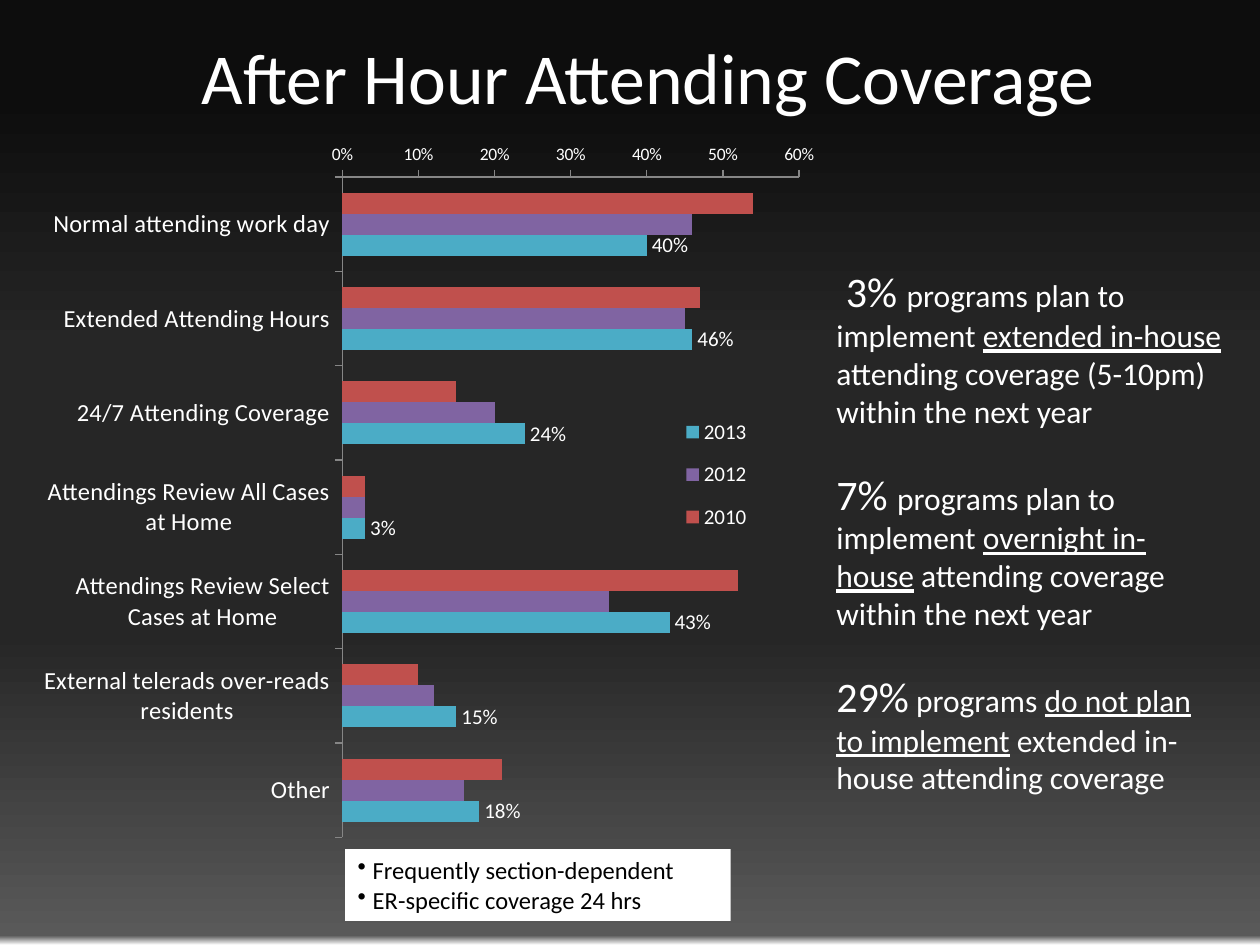
"""Build a slide on after hour attending coverage with a clustered bar chart."""
from dataclasses import dataclass

from lxml import etree
from pptx import Presentation
from pptx.chart.data import CategoryChartData
from pptx.dml.color import RGBColor
from pptx.enum.chart import XL_CHART_TYPE, XL_LABEL_POSITION, XL_LEGEND_POSITION, XL_TICK_MARK
from pptx.enum.shapes import MSO_SHAPE
from pptx.enum.text import MSO_ANCHOR, PP_ALIGN
from pptx.oxml.ns import qn
from pptx.util import Inches, Pt

BAR_CLUSTERED = XL_CHART_TYPE.BAR_CLUSTERED
OUTSIDE_END = XL_LABEL_POSITION.OUTSIDE_END
LEGEND_RIGHT = XL_LEGEND_POSITION.RIGHT
TICK_OUTSIDE, TICK_NONE = XL_TICK_MARK.OUTSIDE, XL_TICK_MARK.NONE
RECTANGLE = MSO_SHAPE.RECTANGLE
TOP, MIDDLE = MSO_ANCHOR.TOP, MSO_ANCHOR.MIDDLE
LEFT, CENTER = PP_ALIGN.LEFT, PP_ALIGN.CENTER

FONT = "Calibri"
WHITE, BLACK, AXIS_GRAY = "FFFFFF", "000000", "868686"
BACKGROUND_STOPS = [(10, "0D0D0D"), (37, "262626"), (67, "262626"), (99, "595959"), (100, WHITE)]
CATEGORIES = [
    "Normal attending work day",
    "Extended Attending Hours",
    "24/7 Attending Coverage",
    "Attendings Review All Cases at Home",
    "Attendings Review Select Cases at Home",
    "External telerads over-reads residents",
    "Other",
]


@dataclass
class YearSeries:
    year: str
    values: list[float]
    color: str
    labelled: bool = False


@dataclass
class Finding:
    share: str
    lead: str
    emphasis: str
    ending: str


SERIES = [
    YearSeries("2010", [0.54, 0.47, 0.15, 0.03, 0.52, 0.10, 0.21], "C0504D"),
    YearSeries("2012", [0.46, 0.45, 0.20, 0.03, 0.35, 0.12, 0.16], "8064A2"),
    YearSeries("2013", [0.40, 0.46, 0.24, 0.03, 0.43, 0.15, 0.18], "4BACC6", True),
]
FINDINGS = [
    Finding(" 3% ", "programs plan to implement ", "extended in-house ",
            "attending coverage (5-10pm) within the next year"),
    Finding("7% ", "programs plan to implement ", "overnight in-house",
            " attending coverage within the next year"),
    Finding("29%", " programs ", "do not plan to implement",
            " extended in-house attending coverage"),
]
NOTES = ["Frequently section-dependent", "ER-specific coverage 24 hrs"]


def rgb(color: str) -> RGBColor:
    return RGBColor.from_string(color)


def format_font(font, size: float, color: str = WHITE, underline: bool = False) -> None:
    font.name, font.size, font.underline = FONT, Pt(size), underline
    font.color.rgb = rgb(color)


def add_text(paragraph, text: str, *, size: float, color: str = WHITE,
             underline: bool = False, align=LEFT) -> None:
    paragraph.alignment = align
    run = paragraph.add_run()
    run.text = text
    format_font(run.font, size, color, underline)


def place(shape, left: float, top: float, width: float, height: float) -> None:
    shape.left, shape.top = Inches(left), Inches(top)
    shape.width, shape.height = Inches(width), Inches(height)


def next_paragraph(frame, index: int):
    return frame.add_paragraph() if index else frame.paragraphs[0]


def paint_background(slide) -> None:
    fill = slide.background.fill
    fill.gradient()
    fill.gradient_angle = 270
    stops = next(slide.element.iter(qn("a:gsLst")))
    for stop in list(stops):
        stops.remove(stop)
    for percent, color in BACKGROUND_STOPS:
        stop = etree.SubElement(stops, qn("a:gs"), pos=str(percent * 1000))
        etree.SubElement(stop, qn("a:srgbClr"), val=color)


def set_layout(parent, index: int, box: tuple, inner: bool = False) -> None:
    for old in parent.findall(qn("c:layout")):
        parent.remove(old)
    layout = etree.Element(qn("c:layout"))
    manual = etree.SubElement(layout, qn("c:manualLayout"))
    settings = [("layoutTarget", "inner")] if inner else []
    settings += [("xMode", "edge"), ("yMode", "edge"), *zip("xywh", map(str, box))]
    for name, value in settings:
        etree.SubElement(manual, qn(f"c:{name}"), val=value)
    parent.insert(index, layout)


def format_axis(axis, size: float) -> None:
    axis.has_major_gridlines = False
    axis.major_tick_mark, axis.minor_tick_mark = TICK_OUTSIDE, TICK_NONE
    axis.format.line.color.rgb = rgb(AXIS_GRAY)
    format_font(axis.tick_labels.font, size)


def add_coverage_chart(slide) -> None:
    data = CategoryChartData(number_format="0%")
    data.categories = CATEGORIES
    for item in SERIES:
        data.add_series(item.year, item.values)
    chart = slide.shapes.add_chart(
        BAR_CLUSTERED, Inches(0.28), Inches(1.06), Inches(6.25), Inches(5.76), data).chart
    chart.has_title = False
    format_font(chart.font, 10, BLACK)
    format_axis(chart.category_axis, 14)
    chart.category_axis.reverse_order = True
    value_axis = chart.value_axis
    format_axis(value_axis, 10)
    value_axis.minimum_scale, value_axis.maximum_scale, value_axis.major_unit = 0, 0.6, 0.1
    value_axis.tick_labels.number_format = "0%"
    value_axis.tick_labels.number_format_is_linked = False

    plot = chart.plots[0]
    plot.gap_width, plot.overlap, plot.vary_by_categories = 150, 0, False
    for item, series in zip(SERIES, plot.series):
        series.format.fill.solid()
        series.format.fill.fore_color.rgb = rgb(item.color)
        if item.labelled:
            labels = series.data_labels
            labels.show_value, labels.position = True, OUTSIDE_END
            labels.number_format, labels.number_format_is_linked = "0%", False
            format_font(labels.font, 12)

    chart.has_legend = True
    chart.legend.position = LEGEND_RIGHT
    chart.legend.include_in_layout = False
    format_font(chart.legend.font, 12)
    root = chart.element if hasattr(chart, "element") else chart._chartSpace
    set_layout(next(root.iter(qn("c:plotArea"))), 0, (0.39, 0.06, 0.58, 0.91), inner=True)
    set_layout(next(root.iter(qn("c:legend"))), 1, (0.8, 0.37, 0.13, 0.2))


def add_notes_box(slide) -> None:
    box = slide.shapes.add_shape(
        RECTANGLE, Inches(2.74), Inches(6.74), Inches(3.06), Inches(0.57))
    box.shadow.inherit = False
    box.fill.solid()
    box.fill.fore_color.rgb = rgb(WHITE)
    box.line.fill.background()
    box.text_frame.vertical_anchor = TOP
    for index, note in enumerate(NOTES):
        paragraph = next_paragraph(box.text_frame, index)
        add_text(paragraph, note, size=14, color=BLACK)
        properties = paragraph._p.get_or_add_pPr()
        properties.set("marL", str(Inches(0.12)))
        properties.set("indent", str(-Inches(0.12)))
        etree.SubElement(properties, qn("a:buChar"), char="•")


def add_findings(slide) -> None:
    box = slide.shapes.add_textbox(Inches(6.54), Inches(2.06), Inches(3.27), Inches(4.34))
    box.text_frame.word_wrap = True
    for index, finding in enumerate(FINDINGS):
        paragraph = next_paragraph(box.text_frame, index)
        paragraph.space_before = Pt(22 if index else 0)
        add_text(paragraph, finding.share, size=24)
        add_text(paragraph, finding.lead, size=18)
        add_text(paragraph, finding.emphasis, size=18, underline=True)
        add_text(paragraph, finding.ending, size=18)


def main() -> None:
    presentation = Presentation()
    presentation.slide_width, presentation.slide_height = Inches(10), Inches(7.5)
    slide = presentation.slides.add_slide(presentation.slide_layouts[5])
    paint_background(slide)
    title = slide.shapes.title
    place(title, 0.65, 0.16, 9, 0.89)
    title.text_frame.vertical_anchor = MIDDLE
    add_text(title.text_frame.paragraphs[0], "After Hour Attending Coverage", size=41, align=CENTER)
    add_coverage_chart(slide)
    add_notes_box(slide)
    add_findings(slide)
    presentation.save("out.pptx")


if __name__ == "__main__":
    main()
